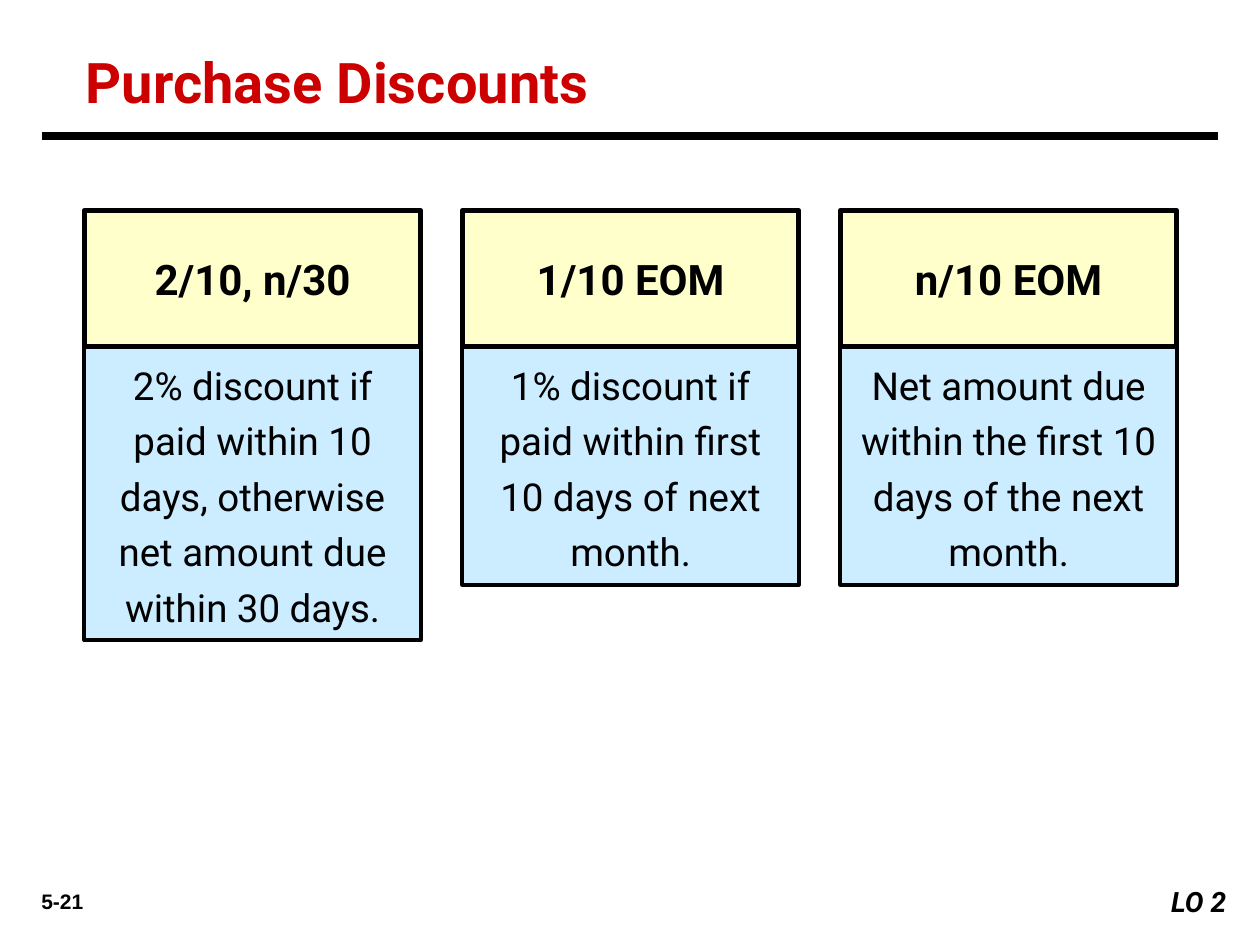
from pptx import Presentation
from pptx.dml.color import RGBColor
from pptx.enum.shapes import MSO_CONNECTOR, MSO_SHAPE
from pptx.enum.text import MSO_ANCHOR, PP_ALIGN
from pptx.oxml.ns import qn
from pptx.util import Inches, Pt

RECT = MSO_SHAPE.RECTANGLE
STRAIGHT = MSO_CONNECTOR.STRAIGHT
TOP, MIDDLE = MSO_ANCHOR.TOP, MSO_ANCHOR.MIDDLE
LEFT, CENTER, RIGHT = PP_ALIGN.LEFT, PP_ALIGN.CENTER, PP_ALIGN.RIGHT

COLORS = {
    "black": "000000",
    "white": "FFFFFF",
    "red": "CC0000",
    "cream": "FFFFCC",
    "sky": "CCECFF",
}

TERMS = [
    ("2/10, n/30", 2.33,
     "2% discount if paid within 10 days, otherwise net amount due within 30 days."),
    ("1/10 EOM", 1.89, "1% discount if paid within first 10 days of next month."),
    ("n/10 EOM", 1.89, "Net amount due within the first 10 days of the next month."),
]


class SlideBuilder:
    """Holds the style and the current slide."""

    font = "Roboto"

    def __init__(self, prs):
        self.slide = prs.slides.add_slide(prs.slide_layouts[5])

    def color(self, name):
        return RGBColor.from_string(COLORS[name])

    def set_text(self, sp, text, align=LEFT, anchor=TOP, spacing=1.0, color="black", **font):
        tf = sp.text_frame
        tf.word_wrap = True
        tf.vertical_anchor = anchor
        p = tf.paragraphs[0]
        p.alignment = align
        p.line_spacing = spacing
        r = p.add_run()
        r.text = text
        r.font.color.rgb = self.color(color)
        for key, value in {"name": self.font, **font}.items():
            setattr(r.font, key, value)

    def title(self, text, box, **style):
        sp = self.slide.shapes.title
        for key, value in zip(("left", "top", "width", "height"), box):
            setattr(sp, key, Inches(value))
        self.set_text(sp, text, **style)

    def text(self, text, box, **style):
        sp = self.slide.shapes.add_textbox(*map(Inches, box))
        self.set_text(sp, text, **style)

    def box(self, text, box, fill, line=None, **style):
        sp = self.slide.shapes.add_shape(RECT, *map(Inches, box))
        sp.shadow.inherit = False
        sp.fill.solid()
        sp.fill.fore_color.rgb = self.color(fill)
        if line:
            sp.line.color.rgb = self.color("black")
            sp.line.width = Pt(line)
        else:
            sp.line.fill.background()
        self.set_text(sp, text, **style)

    def rule(self, x1, x2, y, width):
        """Draw a horizontal line."""
        ln = self.slide.shapes.add_connector(STRAIGHT, *map(Inches, (x1, y, x2, y)))
        ln.line.color.rgb = self.color("black")
        ln.line.width = Pt(width)
        sp_pr = ln._element.spPr
        sp_pr.append(sp_pr.makeelement(qn("a:effectLst"), {}))


def main():
    prs = Presentation()
    prs.slide_width, prs.slide_height = Inches(10), Inches(7.5)
    s = SlideBuilder(prs)

    s.title("Purchase Discounts", (0.58, 0.33, 8.33, 0.61),
            color="red", size=Pt(32), bold=True)
    s.rule(0.33, 9.67, 1.08, 4.5)

    left, top, width, head_height, pitch = 0.67, 1.67, 2.67, 1.08, 3
    for i, (term, height, meaning) in enumerate(TERMS):
        x = left + i * pitch
        s.box(meaning, (x, top + head_height, width, height), "sky", 2.25,
              align=CENTER, spacing=1.2, size=Pt(22))
        s.box(term, (x, top, width, head_height), "cream", 3,
              align=CENTER, anchor=MIDDLE, size=Pt(24), bold=True)

    s.text("5-21", (0.08, 7, 0.83, 0.3), align=CENTER,
           name="Arial", size=Pt(12), bold=True)
    s.box("LO 2", (9, 6.97, 0.83, 0.37), "white", align=RIGHT,
          size=Pt(16), bold=True, italic=True)

    prs.save("out.pptx")


if __name__ == "__main__":
    main()
